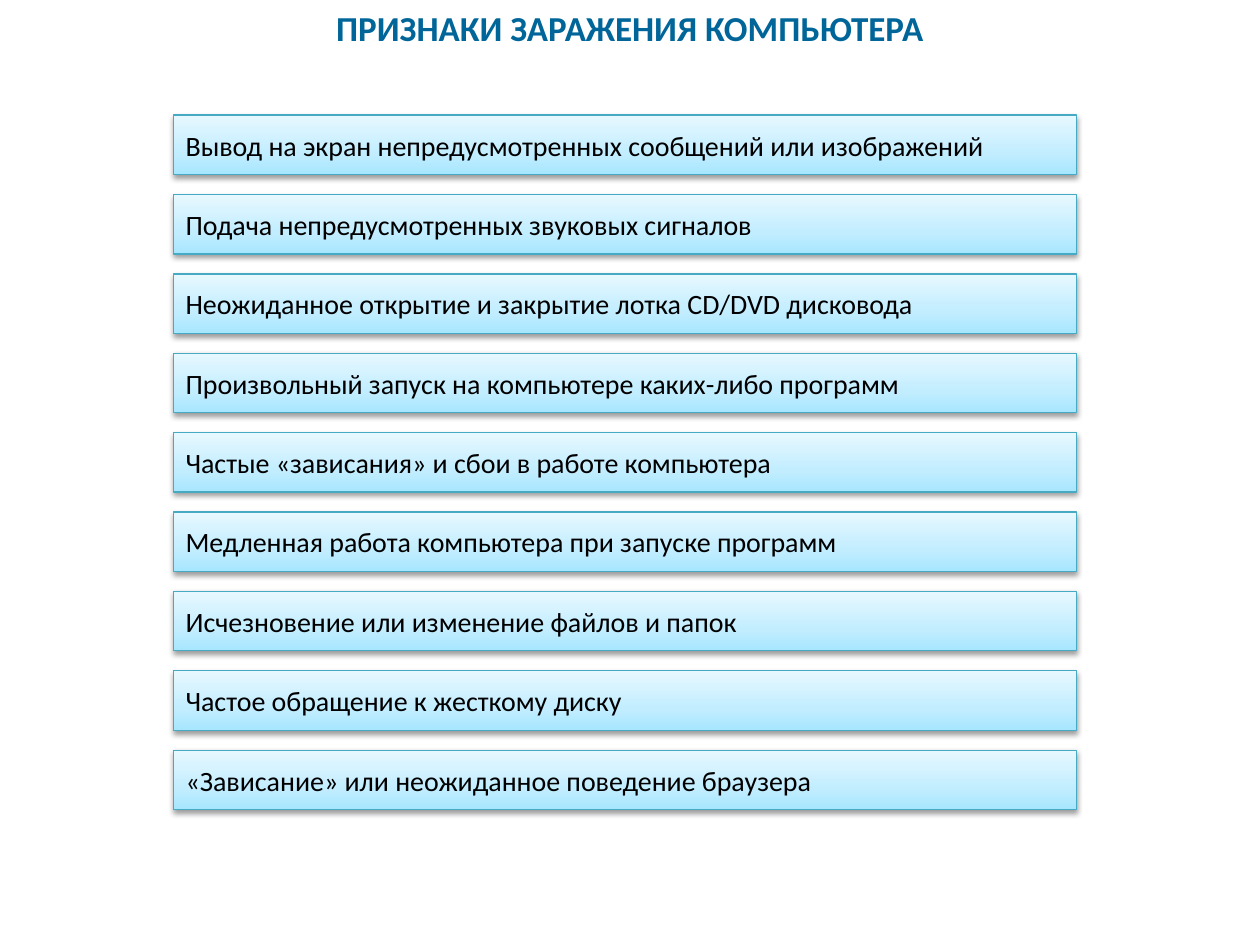
from dataclasses import dataclass

from lxml import etree
from pptx import Presentation
from pptx.dml.color import RGBColor
from pptx.enum import shapes, text
from pptx.oxml import ns
from pptx.util import Pt


@dataclass
class Box:
    left: float
    top: float
    width: float
    height: float


SIGNS = [
    "Вывод на экран непредусмотренных сообщений или изображений",
    "Подача непредусмотренных звуковых сигналов",
    "Неожиданное открытие и закрытие лотка CD/DVD дисковода",
    "Произвольный запуск на компьютере каких-либо программ",
    "Частые «зависания» и сбои в работе компьютера",
    "Медленная работа компьютера при запуске программ",
    "Исчезновение или изменение файлов и папок",
    "Частое обращение к жесткому диску",
    "«Зависание» или неожиданное поведение браузера",
]
STOPS = [(0, "A7E6FF"), (35, "C1EDFF"), (100, "E7F8FF")]
STEP = 45.36


def color(code: str) -> RGBColor:
    return RGBColor.from_string(code)


def add(parent, tag: str, **attrs):
    return etree.SubElement(parent, ns.qn(tag), attrs)


def write(shape, words: str, *, size: float, ink: str, bold: bool = False,
          align=text.PP_ALIGN.LEFT, anchor=text.MSO_ANCHOR.MIDDLE) -> None:
    frame = shape.text_frame
    frame.word_wrap = True
    frame.auto_size = text.MSO_AUTO_SIZE.NONE
    frame.vertical_anchor = anchor
    frame.margin_left = frame.margin_right = Pt(7.2)
    frame.margin_top = frame.margin_bottom = Pt(3.6)
    para = frame.paragraphs[0]
    para.alignment = align
    run = para.add_run()
    run.text = words
    font = run.font
    font.name = "Calibri"
    font.size = Pt(size)
    font.bold = bold
    font.color.rgb = color(ink)


def shade(shape) -> None:
    shape.fill.gradient()
    shape.fill.gradient_angle = 90
    stops = shape._element.spPr.find(f".//{ns.qn('a:gsLst')}")
    for stop in list(stops):
        stops.remove(stop)
    for place, code in STOPS:
        stop = add(stops, "a:gs", pos=str(place * 1000))
        add(stop, "a:srgbClr", val=code)


def cast(shape) -> None:
    shape.shadow.inherit = False
    effects = shape._element.spPr.find(ns.qn("a:effectLst"))
    shadow = add(effects, "a:outerShdw", blurRad=str(Pt(3.15)),
                 dist=str(Pt(1.57)), dir="5400000", rotWithShape="0")
    tint = add(shadow, "a:srgbClr", val="000000")
    add(tint, "a:alpha", val="38000")


def bar(slide, box: Box, words: str) -> None:
    shape = slide.shapes.add_shape(
        shapes.MSO_SHAPE.RECTANGLE,
        Pt(box.left), Pt(box.top), Pt(box.width), Pt(box.height))
    shade(shape)
    shape.line.color.rgb = color("46AAC5")
    shape.line.width = Pt(0.75)
    cast(shape)
    write(shape, words, size=16, ink="000000")


def head(slide, box: Box, words: str) -> None:
    title = slide.shapes.title
    title.left, title.top = Pt(box.left), Pt(box.top)
    title.width, title.height = Pt(box.width), Pt(box.height)
    write(title, words, size=20, ink="006699", bold=True,
          align=text.PP_ALIGN.CENTER, anchor=text.MSO_ANCHOR.TOP)


def main() -> None:
    deck = Presentation()
    deck.slide_width, deck.slide_height = Pt(720), Pt(540)
    slide = deck.slides.add_slide(deck.slide_layouts[5])
    head(slide, Box(31, 0, 658, 31), "ПРИЗНАКИ ЗАРАЖЕНИЯ КОМПЬЮТЕРА")
    for row, sign in enumerate(SIGNS):
        bar(slide, Box(99, 65.8 + row * STEP, 516.2, 34), sign)
    deck.save("out.pptx")


if __name__ == "__main__":
    main()
